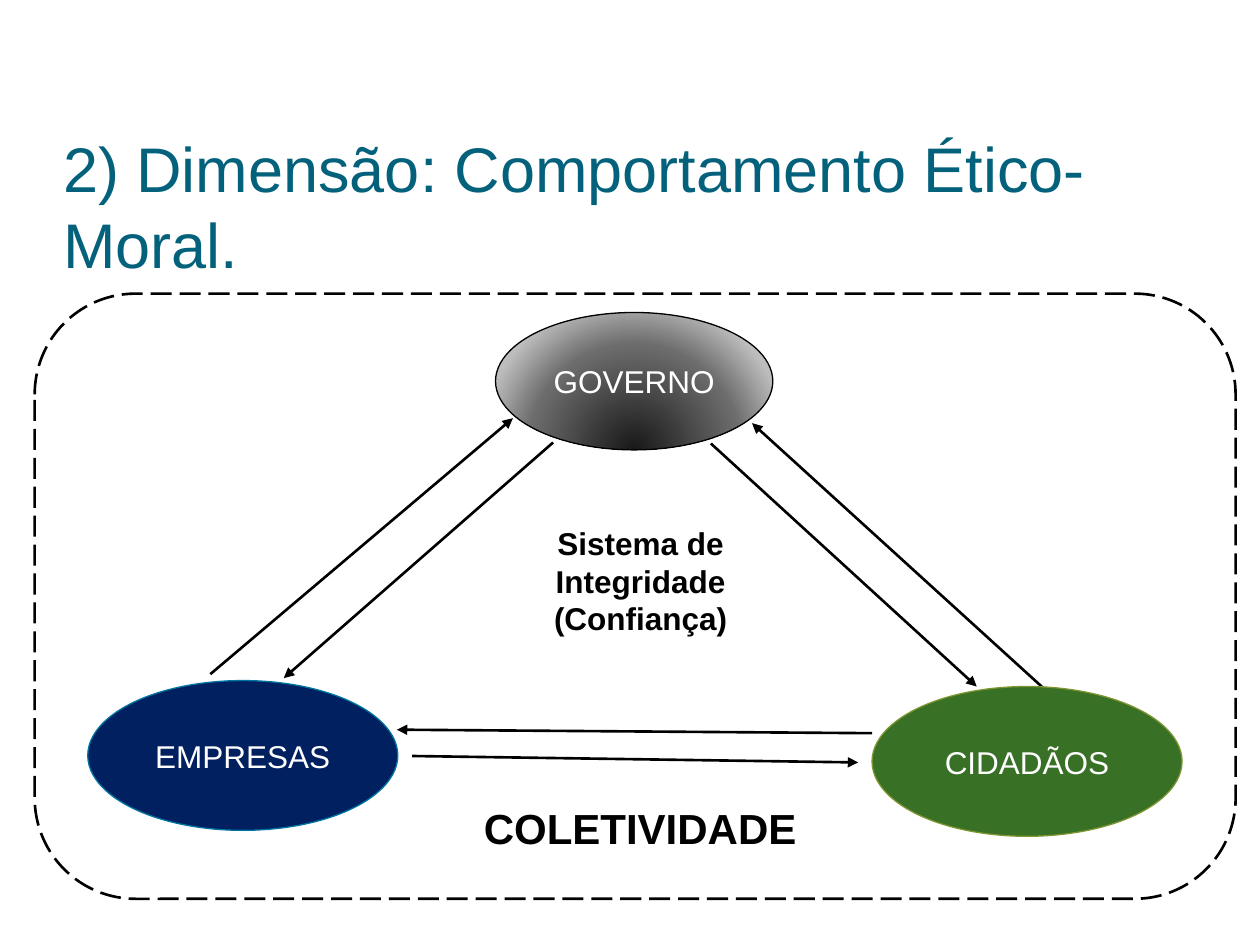
from dataclasses import dataclass
from typing import Optional

from pptx import Presentation
from pptx.dml.color import RGBColor
from pptx.enum.dml import MSO_LINE_DASH_STYLE as Dash
from pptx.enum.shapes import MSO_CONNECTOR as Connector, MSO_SHAPE as Shape
from pptx.enum.text import MSO_ANCHOR as Anchor, MSO_AUTO_SIZE as AutoSize, PP_ALIGN as Align
from pptx.oxml import parse_xml
from pptx.oxml.ns import nsdecls
from pptx.util import Cm, Pt

FONT = "Arial"
COLORS = {
    "title": "04617B", "black": "000000", "white": "FFFFFF",
    "navy": "002060", "navy_edge": "0074A1",
    "green": "387026", "green_edge": "7E9632",
    "gray_dark": "191919", "gray_mid": "6C6C6C", "gray_light": "BDBDBD",
}
GRAY_STOPS = ((0, "gray_dark"), (68, "gray_mid"), (100, "gray_light"))


@dataclass
class Actor:
    name: str
    left: float
    top: float
    width: float
    height: float
    fill: Optional[str]  # None means the gray gradient
    edge: str


@dataclass
class Arrow:
    x1: float
    y1: float
    x2: float
    y2: float


@dataclass
class Label:
    lines: tuple
    left: float
    top: float
    width: float
    size: int


GOVERNMENT = Actor("GOVERNO", 9.99, 6.3, 5.59, 2.77, None, "black")
COMPANIES = Actor("EMPRESAS", 1.77, 13.72, 6.25, 3.02, "navy", "navy_edge")
CITIZENS = Actor("CIDADÃOS", 17.58, 13.84, 6.25, 3.02, "green", "green_edge")
ARROWS = (
    Arrow(4.24, 13.59, 10.34, 8.43),
    Arrow(11.15, 8.92, 5.72, 13.67),
    Arrow(21.23, 14.05, 15.16, 8.53),
    Arrow(14.33, 8.94, 19.69, 13.84),
    Arrow(17.58, 14.78, 8, 14.71),
    Arrow(8.31, 15.24, 17.3, 15.37),
)
INTEGRITY = Label(("Sistema de Integridade", "(Confiança)"), 10.31, 9.8, 5.21, 18)
COMMUNITY = Label(("COLETIVIDADE",), 9.12, 14.78, 7.57, 24)


def rgb(key: str) -> RGBColor:
    return RGBColor.from_string(COLORS[key])


def add_run(paragraph, text: str, size: int, color: str, bold: bool = False) -> None:
    run = paragraph.add_run()
    run.text = text
    run.font.name = FONT
    run.font.size = Pt(size)
    run.font.bold = bold
    run.font.color.rgb = rgb(color)


def set_line(line, color: str, width: float) -> None:
    line.color.rgb = rgb(color)
    line.width = Pt(width)


def fill_gray_gradient(shape) -> None:
    stops = "".join(
        f'<a:gs pos="{pos * 1000}"><a:srgbClr val="{COLORS[key]}"/></a:gs>'
        for pos, key in GRAY_STOPS)
    shape.element.spPr.find(".//{*}prstGeom").addnext(parse_xml(
        f'<a:gradFill {nsdecls("a")} rotWithShape="1"><a:gsLst>{stops}</a:gsLst>'
        '<a:path path="circle"><a:fillToRect l="50000" t="130000" r="50000" b="-30000"/>'
        '</a:path></a:gradFill>'))


def draw_actor(slide, actor: Actor) -> None:
    ellipse = slide.shapes.add_shape(
        Shape.OVAL, Cm(actor.left), Cm(actor.top), Cm(actor.width), Cm(actor.height))
    ellipse.shadow.inherit = False
    if actor.fill is None:
        fill_gray_gradient(ellipse)
    else:
        ellipse.fill.solid()
        ellipse.fill.fore_color.rgb = rgb(actor.fill)
    set_line(ellipse.line, actor.edge, 0.75)
    frame = ellipse.text_frame
    frame.vertical_anchor = Anchor.MIDDLE
    frame.paragraphs[0].alignment = Align.CENTER
    add_run(frame.paragraphs[0], actor.name, 18, "white")


def draw_arrow(slide, arrow: Arrow) -> None:
    connector = slide.shapes.add_connector(
        Connector.STRAIGHT, Cm(arrow.x1), Cm(arrow.y1), Cm(arrow.x2), Cm(arrow.y2))
    set_line(connector.line, "black", 1.5)
    connector.line._get_or_add_ln().append(
        parse_xml(f'<a:tailEnd {nsdecls("a")} type="triangle"/>'))
    connector.element.spPr.append(parse_xml(f'<a:effectLst {nsdecls("a")}/>'))


def draw_label(slide, label: Label) -> None:
    box = slide.shapes.add_textbox(Cm(label.left), Cm(label.top), Cm(label.width), Cm(3.81))
    frame = box.text_frame
    frame.word_wrap = True
    frame.vertical_anchor = Anchor.MIDDLE
    for index, line in enumerate(label.lines):
        paragraph = frame.add_paragraph() if index else frame.paragraphs[0]
        paragraph.alignment = Align.CENTER
        add_run(paragraph, line, label.size, "black", bold=True)


def draw_title(slide, text: str) -> None:
    title = slide.shapes.title
    title.left, title.top, title.width, title.height = Cm(1.27), Cm(2.48), Cm(22.86), Cm(3.18)
    frame = title.text_frame
    frame.auto_size = AutoSize.NONE
    frame.word_wrap = True
    frame.vertical_anchor = Anchor.BOTTOM
    frame.margin_left = frame.margin_right = frame.margin_bottom = 0
    frame.margin_top = Cm(0.13)
    frame.paragraphs[0].alignment = Align.LEFT
    add_run(frame.paragraphs[0], text, 36, "title")


def draw_frame(slide) -> None:
    border = slide.shapes.add_shape(
        Shape.ROUNDED_RECTANGLE, Cm(0.7), Cm(5.92), Cm(24.21), Cm(12.2))
    border.shadow.inherit = False
    border.fill.background()
    set_line(border.line, "black", 1.5)
    border.line.dash_style = Dash.LONG_DASH


def main() -> None:
    prs = Presentation()
    prs.slide_width, prs.slide_height = Cm(25.4), Cm(19.05)
    slide = prs.slides.add_slide(prs.slide_layouts[5])

    draw_title(slide, "2) Dimensão: Comportamento Ético-Moral.")

    # Actors and the relations between them
    draw_actor(slide, GOVERNMENT)
    draw_actor(slide, COMPANIES)
    for arrow in ARROWS:
        draw_arrow(slide, arrow)
    draw_label(slide, INTEGRITY)
    draw_actor(slide, CITIZENS)

    # The community around them
    draw_frame(slide)
    draw_label(slide, COMMUNITY)

    prs.save("out.pptx")


if __name__ == "__main__":
    main()
